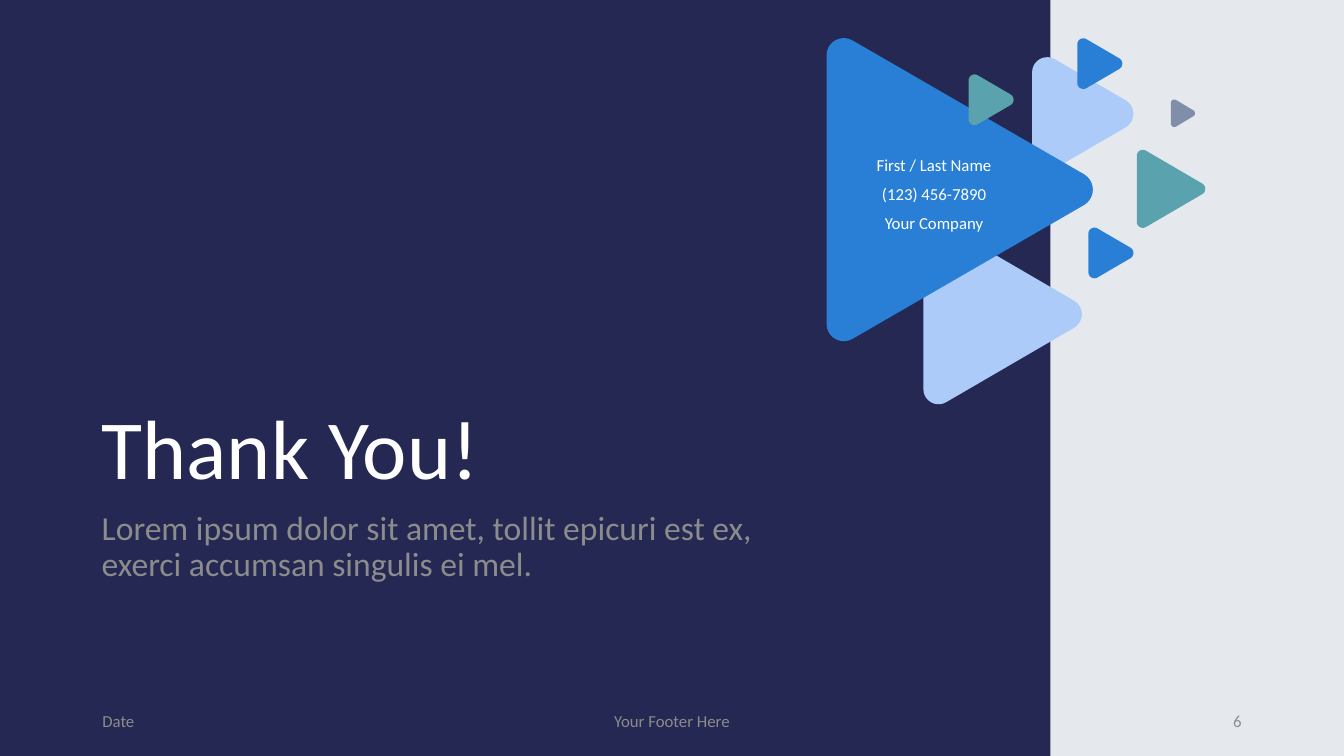
from pptx import Presentation, util as u
from pptx.dml.color import RGBColor
from pptx.enum import shapes, text
from lxml import etree

Cm = u.Cm
COLOURS = {
    "page": "E5E9EE", "navy": "242852", "blue": "297FD5", "pale": "ACCBF9",
    "teal": "5AA2AE", "slate": "7F8FA9", "white": "FFFFFF", "grey": "8C8C8C",
}
FONT = "Calibri"
WIDTH, HEIGHT = 33.87, 19.05

# Offset in the cluster, width, height, corner reach (cm), colour; back to front
TRIANGLES = [
    (2.44, 4.69, 4.01, 4.52, 0.58, "pale"),
    (5.18, 0.48, 2.57, 2.84, 0.58, "pale"),
    (6.6, 4.77, 1.14, 1.27, 0.23, "blue"),
    (6.32, 0, 1.14, 1.27, 0.23, "blue"),
    (8.68, 1.54, 0.61, 0.69, 0.13, "slate"),
    (7.82, 2.81, 1.73, 1.96, 0.23, "teal"),
    (0, 0, 6.73, 7.62, 0.66, "blue"),
    (3.58, 0.91, 1.14, 1.27, 0.23, "teal"),
]
CONTACT = ["First / Last Name", "(123) 456-7890", "Your Company"]
FOOTER = [
    (0, 7.62, "Date", text.PP_ALIGN.LEFT),
    (8.89, 11.43, "Your Footer Here", text.PP_ALIGN.CENTER),
    (21.59, 7.62, "6", text.PP_ALIGN.RIGHT),
]


def rgb(name):
    return RGBColor.from_string(COLOURS[name])


def paint(shape, colour):
    shape.fill.solid()
    shape.fill.fore_color.rgb = rgb(colour)
    shape.line.fill.background()
    shape.shadow.inherit = False


def write(holder, box, words, size, colour, align, anchor, spacing=0.9):
    """Place a text holder and give it one formatted paragraph."""
    holder.left, holder.top, holder.width, holder.height = map(Cm, box)
    frame = holder.text_frame
    frame.word_wrap = True
    frame.auto_size = text.MSO_AUTO_SIZE.NONE
    frame.vertical_anchor = anchor
    frame.text = words
    paragraph = frame.paragraphs[0]
    paragraph.alignment = align
    paragraph.line_spacing = spacing
    paragraph.space_before = u.Pt(0)
    if holder.is_placeholder:
        properties = paragraph._p.get_or_add_pPr()
        properties.set("marL", "0")
        properties.set("indent", "0")
        etree.SubElement(
            properties, "{http://schemas.openxmlformats.org/drawingml/2006/main}buNone")
    font = paragraph.font
    font.name, font.size, font.bold = FONT, u.Pt(size), False
    font.color.rgb = rgb(colour)


def curve(a, b, c, d, steps=10):
    """Points along a cubic curve from a to d."""
    for i in range(steps + 1):
        t = i / steps
        s = 1 - t
        weights = (s ** 3, 3 * s * s * t, 3 * s * t * t, t ** 3)
        yield tuple(sum(w * p[axis] for w, p in zip(weights, (a, b, c, d)))
                    for axis in (0, 1))


def rounded_triangle(group, box, reach, colour):
    """Draw a triangle that points right, with rounded corners."""
    left, top, width, height = box
    corner = [(reach * x, reach * y)
              for x, y in ((1, 0.08), (0.54, -0.19), (0, 0.15), (0, 0.65))]
    upper = list(curve(*corner))
    lower = [(x, height - y) for x, y in reversed(upper)]
    tip = curve(*[(width + reach * x, height / 2 + reach * y)
                  for x, y in ((-0.35, 0.58), (0.08, 0.31), (0.08, -0.31), (-0.35, -0.58))])
    outline = [(Cm(left + x), Cm(top + y)) for x, y in (*upper, *lower, *tip)]
    builder = group.shapes.build_freeform(*outline[0])
    builder.add_line_segments(outline[1:], close=True)
    paint(builder.convert_to_shape(), colour)


def add_backdrop(slide, box):
    slide.background.fill.solid()
    slide.background.fill.fore_color.rgb = rgb("page")
    panel = slide.shapes.add_shape(shapes.MSO_SHAPE.RECTANGLE, *map(Cm, box))
    paint(panel, "navy")
    slide.shapes._spTree.insert(2, panel._element)


def add_cluster(slide, left, top, contact_holders):
    group = slide.shapes.add_group_shape()
    for x, y, width, height, reach, colour in TRIANGLES:
        rounded_triangle(group, (left + x, top + y, width, height), reach, colour)
    # Behind the text, in front of the panel
    slide.shapes._spTree.insert(3, group._element)
    for row, (holder, words) in enumerate(zip(contact_holders, CONTACT)):
        write(holder, (left + 0.35, top + 2.81 + 0.73 * row, 4.72, 0.81), words, 12,
              "white", text.PP_ALIGN.CENTER, text.MSO_ANCHOR.MIDDLE)


def add_message(title, body, left, top, width):
    write(title, (left, top, width, 7.92), "Thank You!", 60, "white",
          text.PP_ALIGN.LEFT, text.MSO_ANCHOR.BOTTOM)
    write(body, (left, top + 8, width, 4.17),
          "Lorem ipsum dolor sit amet, tollit epicuri est ex, exerci accumsan singulis ei mel.",
          24, "grey", text.PP_ALIGN.LEFT, text.MSO_ANCHOR.TOP)


def add_footer(slide, left, top, height):
    for x, width, words, align in FOOTER:
        box = (left + x, top, width, height)
        holder = slide.shapes.add_textbox(*map(Cm, box))
        write(holder, box, words, 12, "grey", align, text.MSO_ANCHOR.MIDDLE, 1.0)


def main():
    deck = Presentation()
    deck.slide_width, deck.slide_height = Cm(WIDTH), Cm(HEIGHT)
    # The comparison layout has a title and four text holders
    slide = deck.slides.add_slide(deck.slide_layouts[4])
    title, body, *contact_holders = slide.placeholders
    add_backdrop(slide, (0, 0, 26.47, HEIGHT))
    add_message(title, body, 2.31, 4.75, 17.02)
    add_cluster(slide, 20.83, 0.97, contact_holders)
    add_footer(slide, 2.33, 17.65, 1.02)
    deck.save("out.pptx")


if __name__ == "__main__":
    main()
